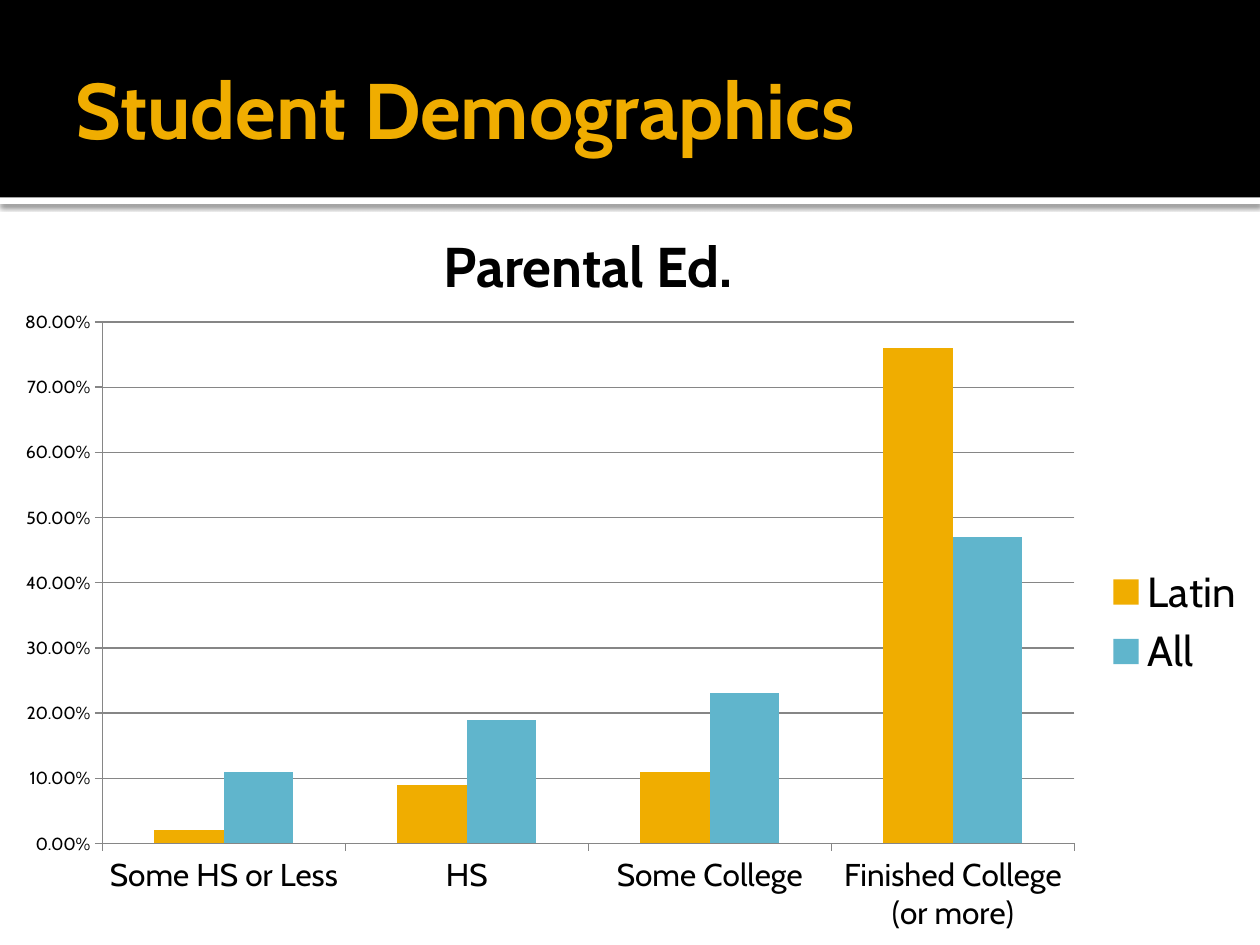
from dataclasses import dataclass

from pptx import Presentation
from pptx.chart.data import CategoryChartData
from pptx.dml.color import RGBColor
from pptx.enum.chart import XL_CHART_TYPE, XL_LEGEND_POSITION, XL_TICK_MARK
from pptx.enum.shapes import MSO_SHAPE
from pptx.enum.text import MSO_ANCHOR, PP_ALIGN
from pptx.oxml import parse_xml
from pptx.oxml.ns import nsdecls, qn
from pptx.util import Cm, Pt

COLUMN = XL_CHART_TYPE.COLUMN_CLUSTERED
RIGHT = XL_LEGEND_POSITION.RIGHT
OUTSIDE = XL_TICK_MARK.OUTSIDE
NO_TICK = XL_TICK_MARK.NONE
RECT = MSO_SHAPE.RECTANGLE
MIDDLE = MSO_ANCHOR.MIDDLE
TOP = MSO_ANCHOR.TOP
LEFT = PP_ALIGN.LEFT
CENTER = PP_ALIGN.CENTER


@dataclass(frozen=True)
class Theme:
    font: str = "Cabin"
    black: RGBColor = RGBColor(0, 0, 0)
    white: RGBColor = RGBColor(255, 255, 255)
    gold: RGBColor = RGBColor(0xF0, 0xAD, 0x00)
    blue: RGBColor = RGBColor(0x60, 0xB5, 0xCC)
    grid: RGBColor = RGBColor(0x86, 0x86, 0x86)
    title: Pt = Pt(45)
    head: Pt = Pt(32)
    legend: Pt = Pt(24)
    label: Pt = Pt(18)
    tick: Pt = Pt(10)


THEME = Theme()
WIDTH, HEIGHT = 25.4, 19.05
BAND, RULE = 3.98, 0.13
CHART_TOP = 6.02

GROUPS = ["Some HS or Less", "HS", "Some College", "Finished College (or more)"]
SERIES = [
    ("Latin", (0.02, 0.09, 0.11, 0.76), THEME.gold),
    ("All", (0.11, 0.19, 0.23, 0.47), THEME.blue),
]


def set_font(font, size, color=THEME.black, bold=False):
    font.name = THEME.font
    font.size = size
    font.color.rgb = color
    font.bold = bold


def add_bar(slide, top, height, color):
    bar = slide.shapes.add_shape(RECT, 0, Cm(top), Cm(WIDTH), Cm(height))
    bar.shadow.inherit = False
    bar.fill.solid()
    bar.fill.fore_color.rgb = color
    bar.line.fill.background()
    return bar


def add_shade(shape):
    """Give the shape a soft shadow that falls straight down."""
    effects = shape.element.spPr.find(qn("a:effectLst"))
    effects.append(parse_xml(
        f'<a:outerShdw {nsdecls("a")} blurRad="{Pt(2.5)}" dist="{Pt(2)}" '
        'dir="5400000" algn="tl" rotWithShape="0">'
        f'<a:srgbClr val="{THEME.black}"><a:alpha val="60000"/></a:srgbClr>'
        '</a:outerShdw>'))


def add_text(slide, text, area, size, color, align, anchor):
    box = slide.shapes.add_textbox(*map(Cm, area))
    frame = box.text_frame
    frame.word_wrap = True
    frame.vertical_anchor = anchor
    frame.text = text
    line = frame.paragraphs[0]
    line.alignment = align
    set_font(line.runs[0].font, size, color, bold=True)


def style_line(line):
    line.color.rgb = THEME.grid


def style_axis(axis, size):
    axis.major_tick_mark = OUTSIDE
    axis.minor_tick_mark = NO_TICK
    set_font(axis.tick_labels.font, size)
    style_line(axis.format.line)


def add_columns(slide):
    data = CategoryChartData(number_format="0.00%")
    data.categories = GROUPS
    for name, values, _ in SERIES:
        data.add_series(name, values)
    chart = slide.shapes.add_chart(
        COLUMN, 0, Cm(CHART_TOP), Cm(WIDTH), Cm(HEIGHT - CHART_TOP), data).chart
    chart.has_title = False
    set_font(chart.font, THEME.tick)

    plot = chart.plots[0]
    plot.vary_by_categories = False
    plot.gap_width = 150
    plot.overlap = 0
    for series, (_, _, color) in zip(plot.series, SERIES):
        series.format.fill.solid()
        series.format.fill.fore_color.rgb = color

    style_axis(chart.category_axis, THEME.label)
    scale = chart.value_axis
    style_axis(scale, THEME.tick)
    scale.minimum_scale, scale.maximum_scale = 0, 0.8
    scale.major_unit = 0.1
    scale.has_major_gridlines = True
    style_line(scale.major_gridlines.format.line)
    scale.tick_labels.number_format = "0.00%"
    scale.tick_labels.number_format_is_linked = False

    chart.has_legend = True
    chart.legend.position = RIGHT
    chart.legend.include_in_layout = False
    set_font(chart.legend.font, THEME.legend)


def main():
    deck = Presentation()
    deck.slide_width, deck.slide_height = Cm(WIDTH), Cm(HEIGHT)
    slide = deck.slides.add_slide(deck.slide_layouts[6])
    add_shade(add_bar(slide, BAND, RULE, THEME.white))
    add_bar(slide, 0, BAND, THEME.black)
    add_text(slide, "Student Demographics", (1.27, 0.43, 22.86, 3.48),
             THEME.title, THEME.gold, LEFT, MIDDLE)
    add_text(slide, "Parental Ed.", (7.2, 4.55, 9.32, 1.63),
             THEME.head, THEME.black, CENTER, TOP)
    add_columns(slide)
    deck.save("out.pptx")


if __name__ == "__main__":
    main()
